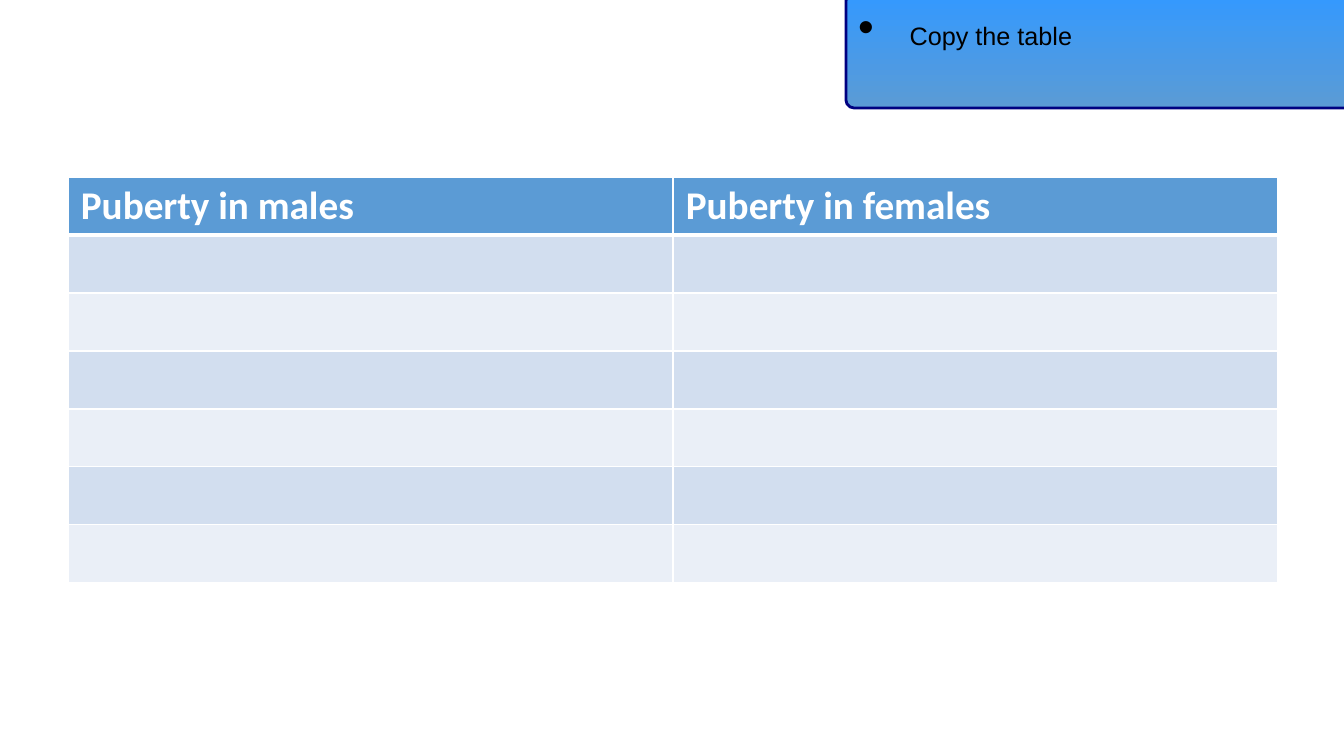
from lxml.etree import SubElement
from pptx import Presentation
from pptx.dml.color import RGBColor
from pptx.enum.shapes import MSO_SHAPE
from pptx.enum.text import MSO_ANCHOR, PP_ALIGN
from pptx.oxml import parse_xml
from pptx.oxml.ns import nsdecls, qn
from pptx.util import Emu, Pt

SLIDE_SIZE = (1344, 756)
HEADINGS = ["Puberty in males", "Puberty in females"]
BLANK_ROWS = 6
TABLE_LEFT, TABLE_TOP = 68, 177
COLUMN_WIDTH, ROW_HEIGHT = 605, 58
CELL_MARGIN_X, CELL_MARGIN_Y = 13, 5
HEADING_FILL = "5B9BD5"
BAND_FILLS = ["D2DEEF", "EAEFF7"]
WHITE = "FFFFFF"

TASK_BOX = (846, -7, 514, 115)
TASK_RUNS = [(" ", 32, True), ("Copy the table", 18, False)]
TASK_GRADIENT = ["3399FF", "5B9BD5"]
TASK_LINE = "000080"
TASK_INDENT = 39


def px(length):
    return Emu(round(length * 914400 / 100.8))


def color(value):
    return RGBColor.from_string(value)


def add_run(paragraph, text, font_name, size, bold, font_color):
    run = paragraph.add_run()
    run.text = text
    run.font.name = font_name
    run.font.size = Pt(size)
    run.font.bold = bold
    run.font.color.rgb = color(font_color)


def set_borders(cell, bottom_width):
    properties = cell._tc.get_or_add_tcPr()
    widths = {"lnL": 1, "lnR": 1, "lnT": 1, "lnB": bottom_width}
    for index, (tag, width) in enumerate(widths.items()):
        border = parse_xml(
            f'<a:{tag} {nsdecls("a")} w="{Pt(width)}"><a:solidFill>'
            f'<a:srgbClr val="{WHITE}"/></a:solidFill></a:{tag}>'
        )
        properties.insert(index, border)


def add_puberty_table(slide):
    row_count, column_count = BLANK_ROWS + 1, len(HEADINGS)
    table = slide.shapes.add_table(
        row_count, column_count, px(TABLE_LEFT), px(TABLE_TOP),
        px(COLUMN_WIDTH * column_count), px(ROW_HEIGHT * row_count),
    ).table
    for column in table.columns:
        column.width = px(COLUMN_WIDTH)
    for row_index, row in enumerate(table.rows):
        row.height = px(ROW_HEIGHT)
        is_heading = row_index == 0
        fill = HEADING_FILL if is_heading else BAND_FILLS[(row_index - 1) % 2]
        for column_index, cell in enumerate(row.cells):
            cell.margin_left = cell.margin_right = px(CELL_MARGIN_X)
            cell.margin_top = cell.margin_bottom = px(CELL_MARGIN_Y)
            cell.fill.solid()
            cell.fill.fore_color.rgb = color(fill)
            set_borders(cell, 3 if is_heading else 1)
            if is_heading:
                paragraph = cell.text_frame.paragraphs[0]
                add_run(paragraph, HEADINGS[column_index], "Calibri", 28, True, WHITE)


def add_task_box(slide):
    shape = slide.shapes.add_shape(MSO_SHAPE.ROUNDED_RECTANGLE, *map(px, TASK_BOX))
    shape.adjustments[0] = 0.07
    shape.shadow.inherit = False
    shape.fill.gradient()
    shape.fill.gradient_angle = 270
    for stop, value in zip(shape.fill.gradient_stops, TASK_GRADIENT):
        stop.color.rgb = color(value)
    shape.line.color.rgb = color(TASK_LINE)
    shape.line.width = Pt(2)

    shape.text_frame.word_wrap = True
    shape.text_frame.vertical_anchor = MSO_ANCHOR.TOP
    paragraph = shape.text_frame.paragraphs[0]
    paragraph.alignment = PP_ALIGN.LEFT
    paragraph.space_before = Pt(4)
    properties = paragraph._p.get_or_add_pPr()
    properties.set("marL", str(px(TASK_INDENT)))
    properties.set("indent", str(-px(TASK_INDENT)))
    SubElement(properties, qn("a:buFont")).set("typeface", "Arial")
    SubElement(properties, qn("a:buChar")).set("char", "•")
    for text, size, bold in TASK_RUNS:
        add_run(paragraph, text, "Arial", size, bold, "000000")


def main():
    presentation = Presentation()
    presentation.slide_width, presentation.slide_height = map(px, SLIDE_SIZE)
    slide = presentation.slides.add_slide(presentation.slide_layouts[6])
    add_puberty_table(slide)
    add_task_box(slide)
    presentation.save("out.pptx")


if __name__ == "__main__":
    main()
